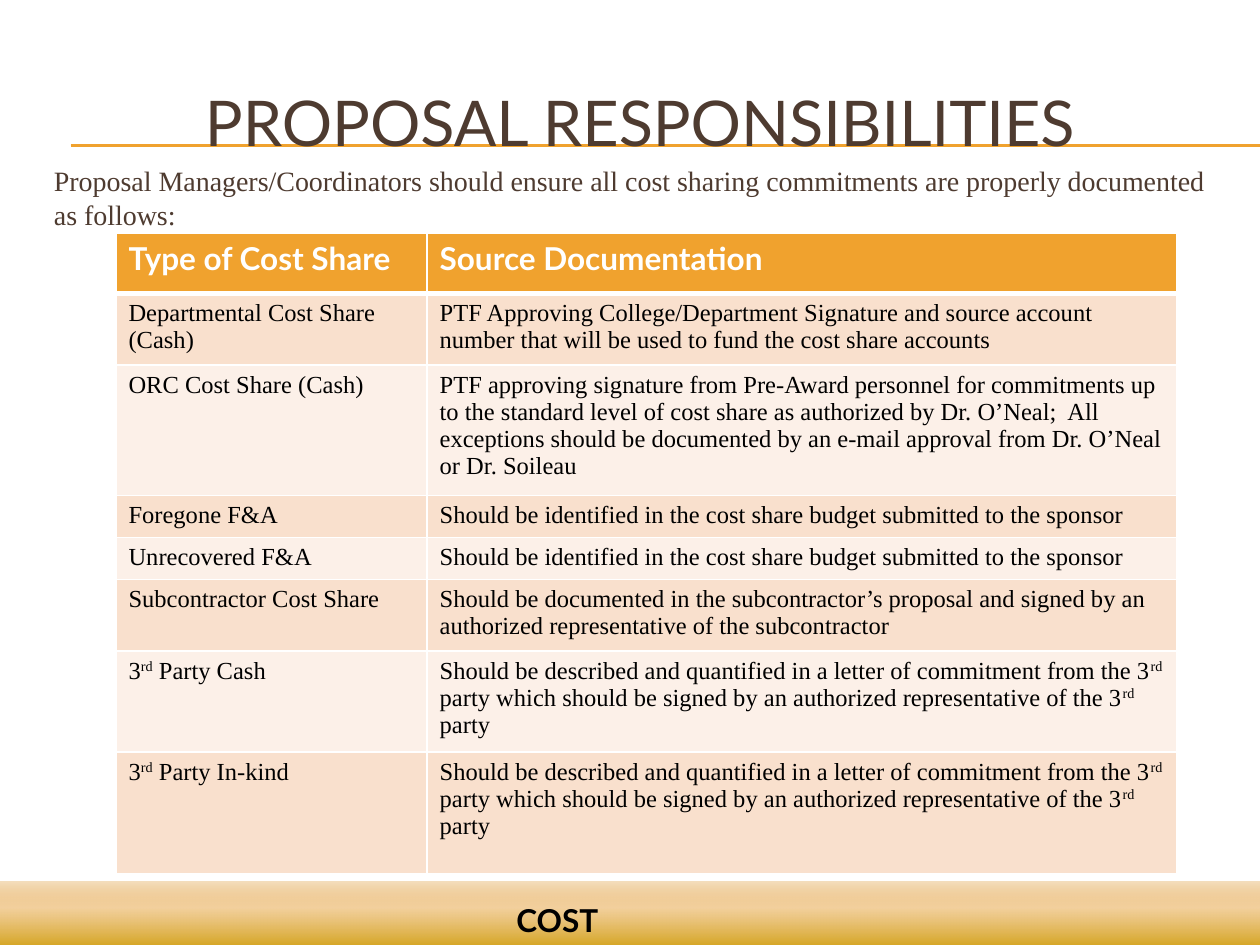
from pptx import Presentation
from pptx.dml.color import RGBColor
from pptx.enum.shapes import MSO_CONNECTOR, MSO_SHAPE
from pptx.enum.text import MSO_ANCHOR, PP_ALIGN
from pptx.oxml import parse_xml
from pptx.oxml.ns import nsdecls, qn
from pptx.util import Inches, Pt
from lxml.etree import SubElement

COLORS = {
    "gold": "F0A22E", "brown": "4E3B30", "black": "000000", "white": "FFFFFF",
    "band_dark": "F9E0CD", "band_light": "FCF0E8",
}
HEAD_FONT, BODY_FONT = "Lato", "Times New Roman"


def add_span(para, text, font, size, color, bold=False):
    span = para.add_run()
    span.text = text
    span.font.name = font
    span.font.size = Pt(size)
    span.font.bold = bold
    span.font.color.rgb = RGBColor.from_string(COLORS[color])
    return span


def add_box(left, top, width, height):
    box = page.shapes.add_textbox(Inches(left), Inches(top), Inches(width), Inches(height))
    box.text_frame.word_wrap = True
    return box.text_frame


deck = Presentation()
deck.slide_width, deck.slide_height = Inches(10), Inches(7.5)
page = deck.slides.add_slide(deck.slide_layouts[6])

# Double rule behind the title
for y in (1.15, 1.16):
    rule = page.shapes.add_connector(
        MSO_CONNECTOR.STRAIGHT, Inches(0.56), Inches(y), Inches(10), Inches(y))
    rule.line.color.rgb = RGBColor.from_string(COLORS["gold"])
    rule.line.width = Pt(0.75)
    SubElement(rule._element.spPr, qn("a:effectLst"))

# Footer band, fading upwards
band = page.shapes.add_shape(
    MSO_SHAPE.RECTANGLE, Inches(-0.01), Inches(7), Inches(10.03), Inches(0.58))
band.shadow.inherit = False
band.line.fill.background()
stops = "".join(
    f'<a:gs pos="{pos * 1000}"><a:srgbClr val="{color}">'
    f'<a:alpha val="{alpha * 1000}"/></a:srgbClr></a:gs>'
    for pos, color, alpha in ((0, "CC9900", 100), (65, "EFC17E", 75), (100, "D68000", 25)))
band._element.spPr.find(qn("a:prstGeom")).addnext(parse_xml(
    f'<a:gradFill {nsdecls("a")} rotWithShape="1"><a:gsLst>{stops}</a:gsLst>'
    '<a:lin ang="16200000" scaled="0"/></a:gradFill>'))

# Title
title = add_box(0.33, 0.5, 9.5, 0.92)
title.vertical_anchor = MSO_ANCHOR.MIDDLE
title.paragraphs[0].alignment = PP_ALIGN.CENTER
add_span(title.paragraphs[0], "PROPOSAL RESPONSIBILITIES", HEAD_FONT, 36, "brown")

# Introduction
intro = add_box(0.33, 1.25, 9.5, 0.6)
add_span(intro.paragraphs[0],
         "Proposal Managers/Coordinators should ensure all cost sharing commitments "
         "are properly documented as follows:", BODY_FONT, 16, "brown")

# Table content; "^" encloses superscripts
BUDGET = "Should be identified in the cost share budget submitted to the sponsor"
LETTER = ("Should be described and quantified in a letter of commitment from the 3^rd^ "
          "party which should be signed by an authorized representative of the 3^rd^ party")
ROWS = [
    (0.48, "Type of Cost Share", "Source Documentation"),
    (0.55, "Departmental Cost Share (Cash)",
     "PTF Approving College/Department Signature and source account number "
     "that will be used to fund the cost share accounts"),
    (1, "ORC Cost Share (Cash)",
     "PTF approving signature from Pre-Award personnel for commitments up to the "
     "standard level of cost share as authorized by Dr. O’Neal;  All exceptions should "
     "be documented by an e-mail approval from Dr. O’Neal or Dr. Soileau"),
    (0.33, "Foregone F&A", BUDGET),
    (0.33, "Unrecovered F&A", BUDGET),
    (0.55, "Subcontractor Cost Share",
     "Should be documented in the subcontractor’s proposal and signed by an "
     "authorized representative of the subcontractor"),
    (0.77, "3^rd^ Party Cash", LETTER),
    (0.97, "3^rd^ Party In-kind", LETTER),
]

# Cost share table
table = page.shapes.add_table(
    len(ROWS), 2, Inches(0.92), Inches(1.85), Inches(8.42), Inches(4.98)).table
for column, width in zip(table.columns, (2.47, 5.95)):
    column.width = Inches(width)
for row_index, (height, *texts) in enumerate(ROWS):
    table.rows[row_index].height = Inches(height)
    header = row_index == 0
    fill = "gold" if header else ("band_light", "band_dark")[row_index % 2]
    for column_index, text in enumerate(texts):
        cell = table.cell(row_index, column_index)
        para = cell.text_frame.paragraphs[0]
        for part_index, part in enumerate(text.split("^")):
            if header:
                add_span(para, part, HEAD_FONT, 18, "white", bold=True)
            else:
                span = add_span(para, part, BODY_FONT, 14, "black")
                if part_index % 2:
                    span.font._element.set("baseline", "30000")
        # Borders come before the fill in the cell properties
        properties = cell._tc.get_or_add_tcPr()
        for side in "LRTB":
            thick = (header and side == "B") or (row_index == 1 and side == "T")
            properties.append(parse_xml(
                f'<a:ln{side} {nsdecls("a")} w="{Pt(3 if thick else 1)}"><a:solidFill>'
                f'<a:srgbClr val="{COLORS["white"]}"/></a:solidFill></a:ln{side}>'))
        cell.fill.solid()
        cell.fill.fore_color.rgb = RGBColor.from_string(COLORS[fill])

# Footer label
footer = add_box(4, 7.1, 1.57, 0.4)
add_span(footer.paragraphs[0], "COST", HEAD_FONT, 18, "black", bold=True)

deck.save("out.pptx")
